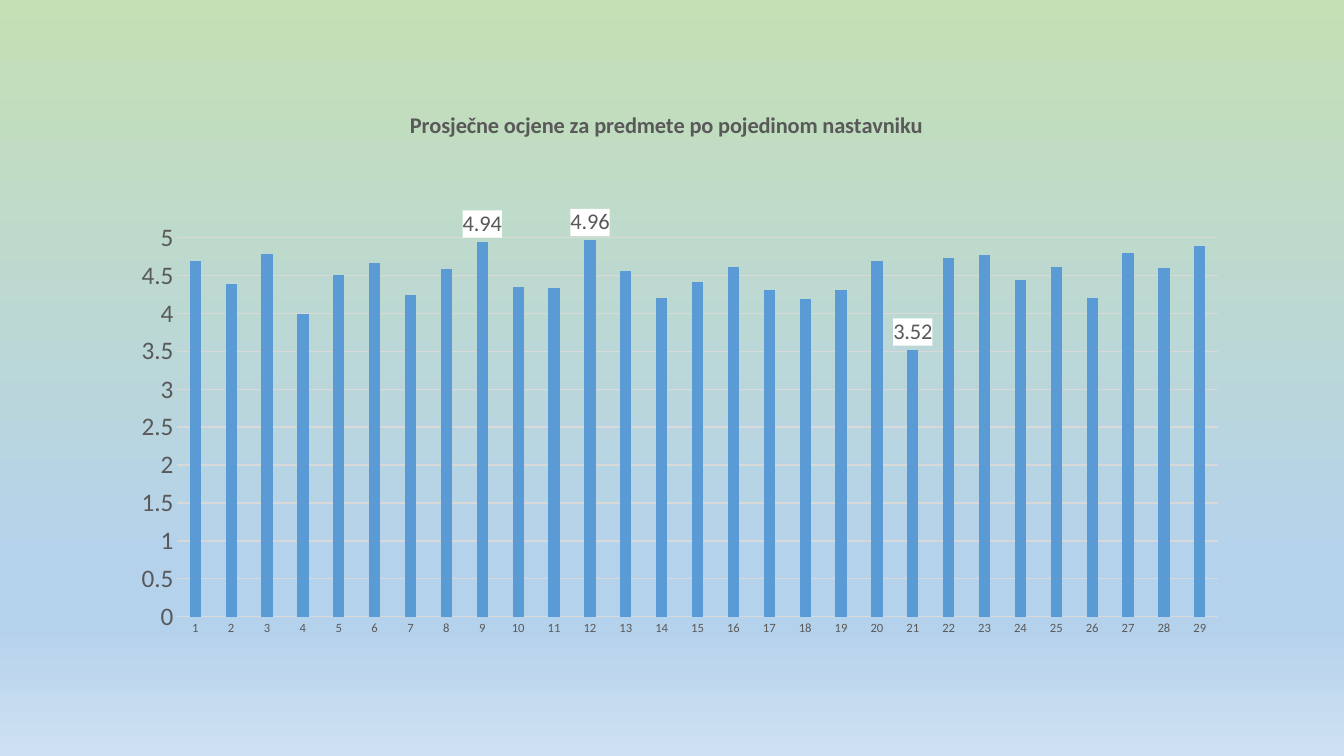
from dataclasses import dataclass

from lxml.etree import SubElement
from pptx import Presentation
from pptx.chart.axis import _BaseAxis
from pptx.chart.data import CategoryChartData
from pptx.dml.color import RGBColor
from pptx.enum.chart import XL_CHART_TYPE, XL_LABEL_POSITION, XL_TICK_MARK
from pptx.oxml import parse_xml
from pptx.oxml.ns import nsdecls, qn
from pptx.text.text import Font
from pptx.util import Inches, Pt

SLIDE_WIDTH, SLIDE_HEIGHT = Inches(13.33), Inches(7.5)
TITLE = "Prosječne ocjene za predmete po pojedinom nastavniku"
GRADES = (
    4.68, 4.38, 4.78, 3.99, 4.5, 4.66, 4.24, 4.58, 4.94, 4.34,
    4.33, 4.96, 4.56, 4.2, 4.41, 4.61, 4.31, 4.18, 4.3, 4.68,
    3.52, 4.73, 4.77, 4.43, 4.6, 4.2, 4.79, 4.59, 4.88,
)
LABELLED_TEACHERS = (9, 12, 21)
INK, RULE, BAR, LABEL_FILL = "595959", "D9D9D9", "5B9BD5", "FFFFFF"


@dataclass(frozen=True)
class GradientStop:
    percent: int
    color: str


@dataclass(frozen=True)
class Share:
    """A position, and optionally a size, as shares of the enclosing area."""
    x: float
    y: float
    w: float | None = None
    h: float | None = None


BACKGROUND = (
    GradientStop(0, "C5E0B4"),
    GradientStop(74, "B5D2EC"),
    GradientStop(83, "B5D2EC"),
    GradientStop(100, "CEE1F2"),
)
CHART_AREA = Share(0.069, 0.117, 0.863, 0.784)
PLOT_AREA = Share(0.073, 0.251, 0.897, 0.641)
TITLE_SPOT = Share(0.27, 0.03)


def rgb(color: str) -> RGBColor:
    return RGBColor.from_string(color)


def format_font(font: Font, size: int, bold: bool = False) -> None:
    for name, value in {"name": "Calibri", "size": Pt(size), "bold": bold}.items():
        setattr(font, name, value)
    font.color.rgb = rgb(INK)


def paint_background(slide, stops: tuple[GradientStop, ...]) -> None:
    """Fill the background from top to bottom."""
    fill = slide.background.fill
    fill.gradient()
    fill.gradient_angle = 270
    stop_list = next(slide.background._cSld.iter(qn("a:gsLst")))
    for old_stop in list(stop_list):
        stop_list.remove(old_stop)
    for stop in stops:
        entry = SubElement(stop_list, qn("a:gs"), pos=str(stop.percent * 1000))
        SubElement(entry, qn("a:srgbClr"), val=stop.color)


def manual_layout(area: Share, inner: bool = False):
    layout = parse_xml(f"<c:layout {nsdecls('c')}><c:manualLayout/></c:layout>")
    settings = {
        "layoutTarget": "inner" if inner else None,
        "xMode": "edge", "yMode": "edge",
        "x": area.x, "y": area.y, "w": area.w, "h": area.h,
    }
    for tag, value in settings.items():
        if value is not None:
            SubElement(layout[0], qn(f"c:{tag}"), val=str(value))
    return layout


def place(element, area: Share, inner: bool = False, after: str | None = None) -> None:
    """Set the manual layout of a chart part, first or behind the child named."""
    for old_layout in element.findall(qn("c:layout")):
        element.remove(old_layout)
    index = 0 if after is None else element.index(element.find(qn(after))) + 1
    element.insert(index, manual_layout(area, inner))


def format_axis(axis: _BaseAxis, size: int) -> None:
    settings = {
        "major_tick_mark": XL_TICK_MARK.NONE,
        "minor_tick_mark": XL_TICK_MARK.NONE,
    }
    for name, value in settings.items():
        setattr(axis, name, value)
    format_font(axis.tick_labels.font, size)


def draw_rule(line) -> None:
    line.color.rgb = rgb(RULE)
    line.width = Pt(0.75)


def label_teachers(series, teachers: tuple[int, ...]) -> None:
    for teacher in teachers:
        label = series.points[teacher - 1].data_label
        format_font(label.font, 16)
        label.position = XL_LABEL_POSITION.OUTSIDE_END
    series.data_labels.show_value = False
    for label in series._element.iter(qn("c:dLbl")):
        label.find(qn("c:txPr")).addprevious(parse_xml(
            f"<c:spPr {nsdecls('c', 'a')}><a:solidFill>"
            f'<a:srgbClr val="{LABEL_FILL}"/></a:solidFill></c:spPr>'
        ))


def add_grades_chart(slide) -> None:
    data = CategoryChartData()
    data.categories = [str(teacher) for teacher in range(1, len(GRADES) + 1)]
    data.add_series("Series 1", GRADES)
    chart = slide.shapes.add_chart(
        XL_CHART_TYPE.COLUMN_CLUSTERED,
        int(SLIDE_WIDTH * CHART_AREA.x), int(SLIDE_HEIGHT * CHART_AREA.y),
        int(SLIDE_WIDTH * CHART_AREA.w), int(SLIDE_HEIGHT * CHART_AREA.h), data,
    ).chart
    chart.has_legend = False
    format_font(chart.font, 10)

    heading = chart.chart_title.text_frame
    heading.text = TITLE
    format_font(heading.paragraphs[0].runs[0].font, 16, bold=True)
    place(chart.chart_title._element, TITLE_SPOT, after="c:tx")
    place(next(chart._chartSpace.iter(qn("c:plotArea"))), PLOT_AREA, inner=True)

    teachers, grades = chart.category_axis, chart.value_axis
    format_axis(teachers, 9)
    draw_rule(teachers.format.line)
    format_axis(grades, 18)
    grades.format.line.fill.background()
    draw_rule(grades.major_gridlines.format.line)
    for name, value in {
        "minimum_scale": 0, "maximum_scale": 5, "major_unit": 0.5,
    }.items():
        setattr(grades, name, value)

    plot = chart.plots[0]
    for name, value in {
        "gap_width": 219, "overlap": -27, "vary_by_categories": False,
    }.items():
        setattr(plot, name, value)
    series = plot.series[0]
    series.format.fill.solid()
    series.format.fill.fore_color.rgb = rgb(BAR)
    label_teachers(series, LABELLED_TEACHERS)


def main() -> None:
    presentation = Presentation()
    presentation.slide_width, presentation.slide_height = SLIDE_WIDTH, SLIDE_HEIGHT
    slide = presentation.slides.add_slide(presentation.slide_layouts[6])
    paint_background(slide, BACKGROUND)
    add_grades_chart(slide)
    presentation.save("out.pptx")


if __name__ == "__main__":
    main()
